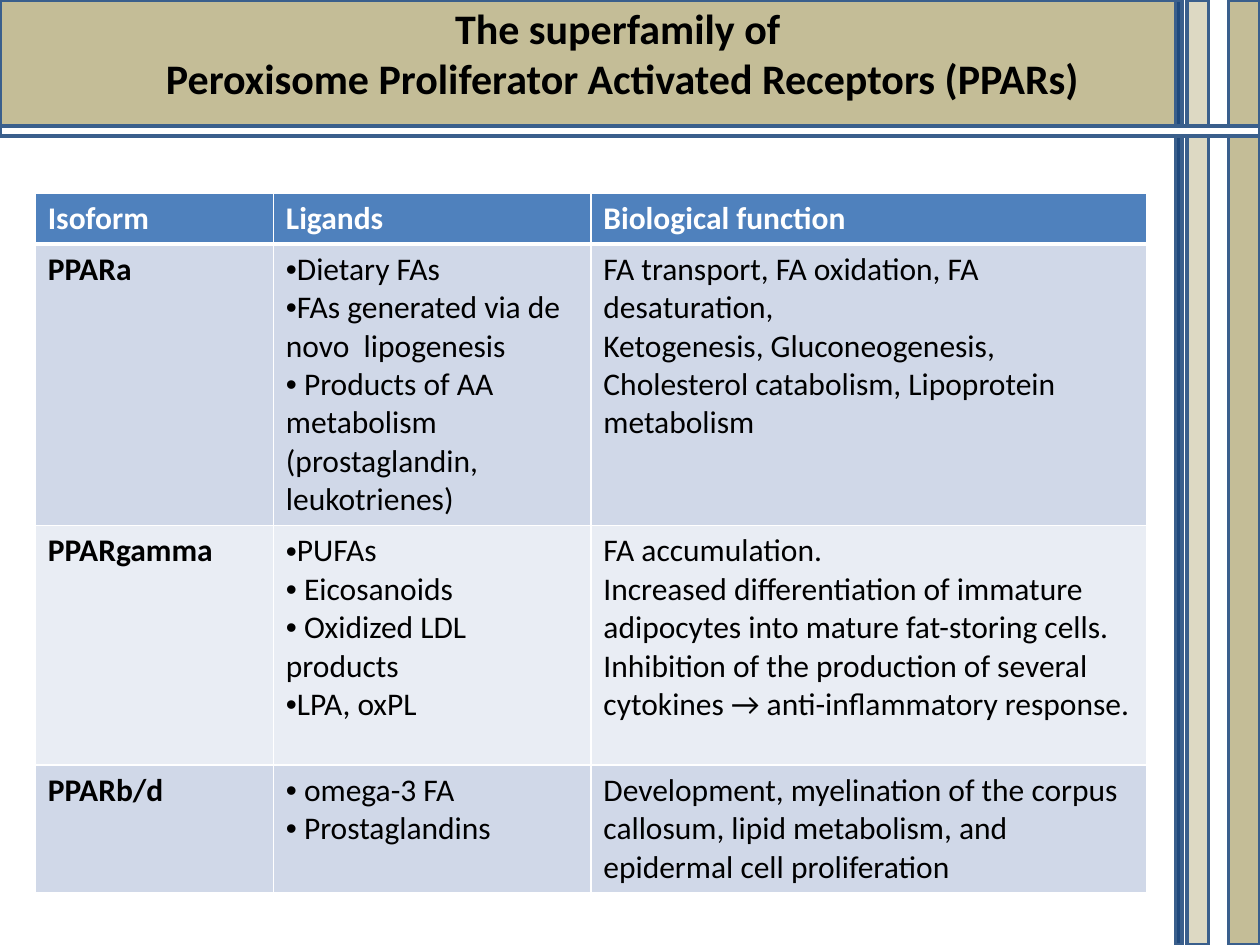
from lxml import etree
from pptx import Presentation
from pptx import util as u
from pptx.dml.color import RGBColor
from pptx.enum import shapes, text
from pptx.oxml import ns

PX = 9144
FONT = "Calibri"
BLACK = RGBColor(0x00, 0x00, 0x00)
WHITE = RGBColor(0xFF, 0xFF, 0xFF)
TAN = RGBColor(0xC4, 0xBD, 0x97)
SAND = RGBColor(0xDD, 0xD9, 0xC3)
NAVY = RGBColor(0x1F, 0x49, 0x7D)
OUTLINE = RGBColor(0x3A, 0x5F, 0x8C)
HEADER = RGBColor(0x4F, 0x81, 0xBD)
BANDS = [RGBColor(0xE9, 0xED, 0xF4), RGBColor(0xD0, 0xD8, 0xE8)]

TITLE = ["The superfamily of ", "Peroxisome Proliferator Activated Receptors (PPARs)"]
COLUMNS = [189, 252, 441]
ROWS = [40, 221, 190, 100]
LIGANDS = 1
CELLS = [
    [["Isoform"], ["Ligands"], ["Biological function"]],
    [["PPARa"],
     ["Dietary FAs", "FAs generated via de novo  lipogenesis",
      " Products of AA metabolism (prostaglandin, leukotrienes)"],
     ["FA transport, FA oxidation, FA desaturation,",
      "Ketogenesis, Gluconeogenesis, Cholesterol catabolism, Lipoprotein metabolism"]],
    [["PPARgamma"],
     ["PUFAs", " Eicosanoids", " Oxidized LDL products", "LPA, oxPL"],
     ["FA accumulation.",
      "Increased differentiation of immature adipocytes into mature fat-storing cells.",
      "Inhibition of the production of several cytokines → anti-inflammatory response."]],
    [["PPARb/d"],
     [" omega-3 FA", " Prostaglandins"],
     ["Development, myelination of the corpus callosum, lipid metabolism, "
      "and epidermal cell proliferation"]],
]


def px(*values):
    """Turn px lengths into EMU."""
    return [u.Emu(v * PX) for v in values]


def style_runs(tf, size, color, bold):
    """Give every run in a text frame the same look."""
    for p in tf.paragraphs:
        for r in p.runs:
            r.font.name, r.font.size, r.font.bold = FONT, u.Pt(size), bold
            r.font.color.rgb = color


def add_band(s, box, color):
    """Add one outlined decorative band."""
    sp = s.shapes.add_shape(shapes.MSO_SHAPE.RECTANGLE, *px(*box))
    sp.shadow.inherit = False
    sp.fill.solid()
    sp.fill.fore_color.rgb = color
    sp.line.color.rgb = OUTLINE
    sp.line.width = u.Pt(2)


def add_frame(s, left, top, width, height):
    """Add the title band, the right-hand stripes and the rule."""
    right = left + width
    add_band(s, (left, top, width - 67, 100), TAN)
    for offset, stripe, color in [(25, 25, TAN), (58, 17, SAND), (67, 5, NAVY)]:
        add_band(s, (right - offset, top, stripe, height), color)
    add_band(s, (left, top + 100, width, 8), WHITE)


def add_title(s, left, top, width, height):
    """Place the title placeholder above the bands."""
    sp = s.shapes.title
    sp.element.getparent().append(sp.element)
    sp.left, sp.top, sp.width, sp.height = px(left, top, width, height)
    tf = sp.text_frame
    tf.text = "\n".join(TITLE)
    tf.word_wrap = False
    tf.auto_size = text.MSO_AUTO_SIZE.NONE
    tf.vertical_anchor = text.MSO_ANCHOR.TOP
    for p in tf.paragraphs:
        p.alignment = text.PP_ALIGN.CENTER
    style_runs(tf, 24, BLACK, True)


def add_borders(cell, row):
    """Draw white cell borders, heavier below the header."""
    tc_pr = cell._tc.get_or_add_tcPr()
    heavy = {(0, "B"), (1, "T")}
    for side in "LRTB":
        width = u.Pt(3 if (row, side) in heavy else 1)
        ln = etree.SubElement(tc_pr, ns.qn(f"a:ln{side}"), w=str(width))
        fill = etree.SubElement(ln, ns.qn("a:solidFill"))
        etree.SubElement(fill, ns.qn("a:srgbClr"), val=str(WHITE))


def add_bullets(tf):
    """Give every paragraph a bullet."""
    for p in tf.paragraphs:
        p_pr = p._p.get_or_add_pPr()
        etree.SubElement(p_pr, ns.qn("a:buFont"), typeface="Arial")
        etree.SubElement(p_pr, ns.qn("a:buChar"), char="•")


def add_receptor_table(s, left, top):
    """Add the table of isoforms, ligands and functions."""
    box = px(left, top, sum(COLUMNS), sum(ROWS))
    table = s.shapes.add_table(len(ROWS), len(COLUMNS), *box).table
    for column, width in zip(table.columns, px(*COLUMNS)):
        column.width = width
    for row, height in zip(table.rows, px(*ROWS)):
        row.height = height
    for i, row in enumerate(CELLS):
        for j, lines in enumerate(row):
            cell = table.cell(i, j)
            add_borders(cell, i)
            cell.fill.solid()
            cell.fill.fore_color.rgb = BANDS[i % 2] if i else HEADER
            tf = cell.text_frame
            tf.text = "\n".join(lines)
            if i and j == LIGANDS:
                add_bullets(tf)
            style_runs(tf, 18, BLACK if i else WHITE, i == 0 or j == 0)


def main():
    """Build and save the slide."""
    prs = Presentation()
    prs.slide_width, prs.slide_height = px(1000, 750)
    s = prs.slides.add_slide(prs.slide_layouts.get_by_name("Title Only"))
    add_frame(s, 0, 0, 1000, 750)
    add_title(s, 118, -3, 752, 91)
    add_receptor_table(s, 28, 153)
    prs.save("out.pptx")


if __name__ == "__main__":
    main()
